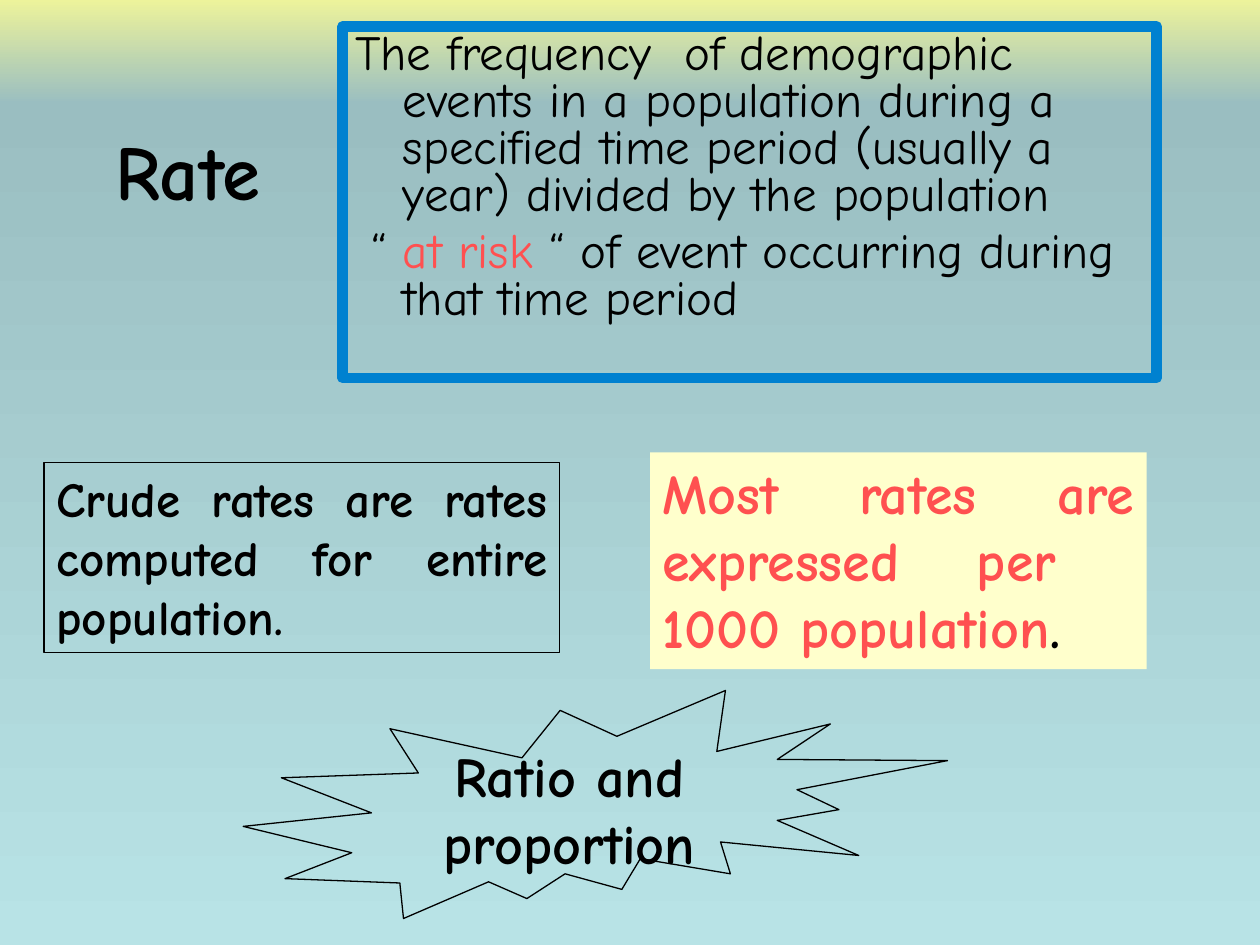
from copy import deepcopy

from pptx import Presentation
from pptx import util as u
from pptx.dml.color import RGBColor
from pptx.enum import shapes, text
from pptx.oxml.ns import qn

PX = 9144  # EMU per px, 100 px to the inch
FONT = "Comic Neue"
COLORS = {
    "sky_top": "EDF39B",
    "sky_band": "9ABEC1",
    "sky_bottom": "B8E3E6",
    "ink": "000000",
    "frame": "0081D0",
    "accent": "FF5050",
    "note": "FFFFCC",
}
SKY = [(0, "sky_top"), (0.11, "sky_band"), (1, "sky_bottom")]


def rgb(name):
    return RGBColor.from_string(COLORS[name])


def paint_background(slide):
    fill = slide.background.fill
    fill.gradient()
    fill.gradient_angle = 270
    stop_list = slide.element.find(".//" + qn("a:gsLst"))
    stop_list.append(deepcopy(stop_list[0]))
    for stop, (position, color) in zip(fill.gradient_stops, SKY):
        stop.position = position
        stop.color.rgb = rgb(color)


def write(frame, paragraphs, size, bold=True, align=None, anchor=text.MSO_ANCHOR.TOP,
          fit=text.MSO_AUTO_SIZE.NONE, line_spacing=None, gap=None, hanging=0):
    """Fill a frame; each paragraph is a list of (words, colour) runs."""
    frame.word_wrap = True
    frame.auto_size = fit
    frame.vertical_anchor = anchor
    for index, runs in enumerate(paragraphs):
        paragraph = frame.add_paragraph() if index else frame.paragraphs[0]
        paragraph.alignment = align
        paragraph.line_spacing = line_spacing
        if index and gap:
            paragraph.space_before = u.Pt(gap)
        if hanging:
            properties = paragraph._p.get_or_add_pPr()
            properties.set("marL", str(hanging * PX))
            properties.set("indent", str(-hanging * PX))
        for words, color in runs:
            run = paragraph.add_run()
            run.text = words
            run.font.name = FONT
            run.font.size = u.Pt(size)
            run.font.bold = bold
            run.font.color.rgb = rgb(color)


def add_box(slide, box, preset=shapes.MSO_SHAPE.RECTANGLE, fill=None, line=None, width=0.75):
    shape = slide.shapes.add_shape(preset, *(n * PX for n in box))
    shape.shadow.inherit = False
    if fill:
        shape.fill.solid()
        shape.fill.fore_color.rgb = rgb(fill)
    else:
        shape.fill.background()
    if line:
        shape.line.color.rgb = rgb(line)
        shape.line.width = u.Pt(width)
    else:
        shape.line.fill.background()
    return shape.text_frame


def place_title(slide, box):
    title = slide.shapes.title
    title.left, title.top, title.width, title.height = (n * PX for n in box)
    write(title.text_frame, [[("Rate", "ink")]], 44,
          align=text.PP_ALIGN.CENTER, anchor=text.MSO_ANCHOR.MIDDLE)


def add_definition(slide, box):
    definition = [
        [("The frequency  of demographic events in a population during a specified "
          "time period (usually a year) divided by the population", "ink")],
        [(" “ ", "ink"), ("at risk", "accent"),
         (" “ of event occurring during that time period", "ink")],
    ]
    write(add_box(slide, box, line="frame", width=6), definition, 28, bold=False,
          align=text.PP_ALIGN.LEFT, line_spacing=0.8, gap=5.6, hanging=38)


def add_note(slide, box, runs, size, **style):
    write(add_box(slide, box, **style), [runs], size, align=text.PP_ALIGN.JUSTIFY,
          fit=text.MSO_AUTO_SIZE.SHAPE_TO_FIT_TEXT)


def add_burst(slide, box):
    burst = add_box(slide, box, shapes.MSO_SHAPE.EXPLOSION2, line="ink")
    write(burst, [[("Ratio and proportion", "ink")]], 32,
          align=text.PP_ALIGN.CENTER, anchor=text.MSO_ANCHOR.MIDDLE)


def main():
    deck = Presentation()
    deck.slide_width, deck.slide_height = 1000 * PX, 750 * PX
    slide = deck.slides.add_slide(deck.slide_layouts[5])
    paint_background(slide)
    place_title(slide, (27, 76, 244, 117))
    add_definition(slide, (272, 21, 646, 279))
    add_note(slide, (516, 359, 394, 172),
             [("Most rates are expressed per  1000 population", "accent"), (".", "ink")],
             32, fill="note")
    add_note(slide, (35, 367, 409, 151),
             [("Crude rates are rates computed for entire population.", "ink")],
             28, line="ink")
    add_burst(slide, (193, 548, 559, 181))
    deck.save("out.pptx")


if __name__ == "__main__":
    main()
